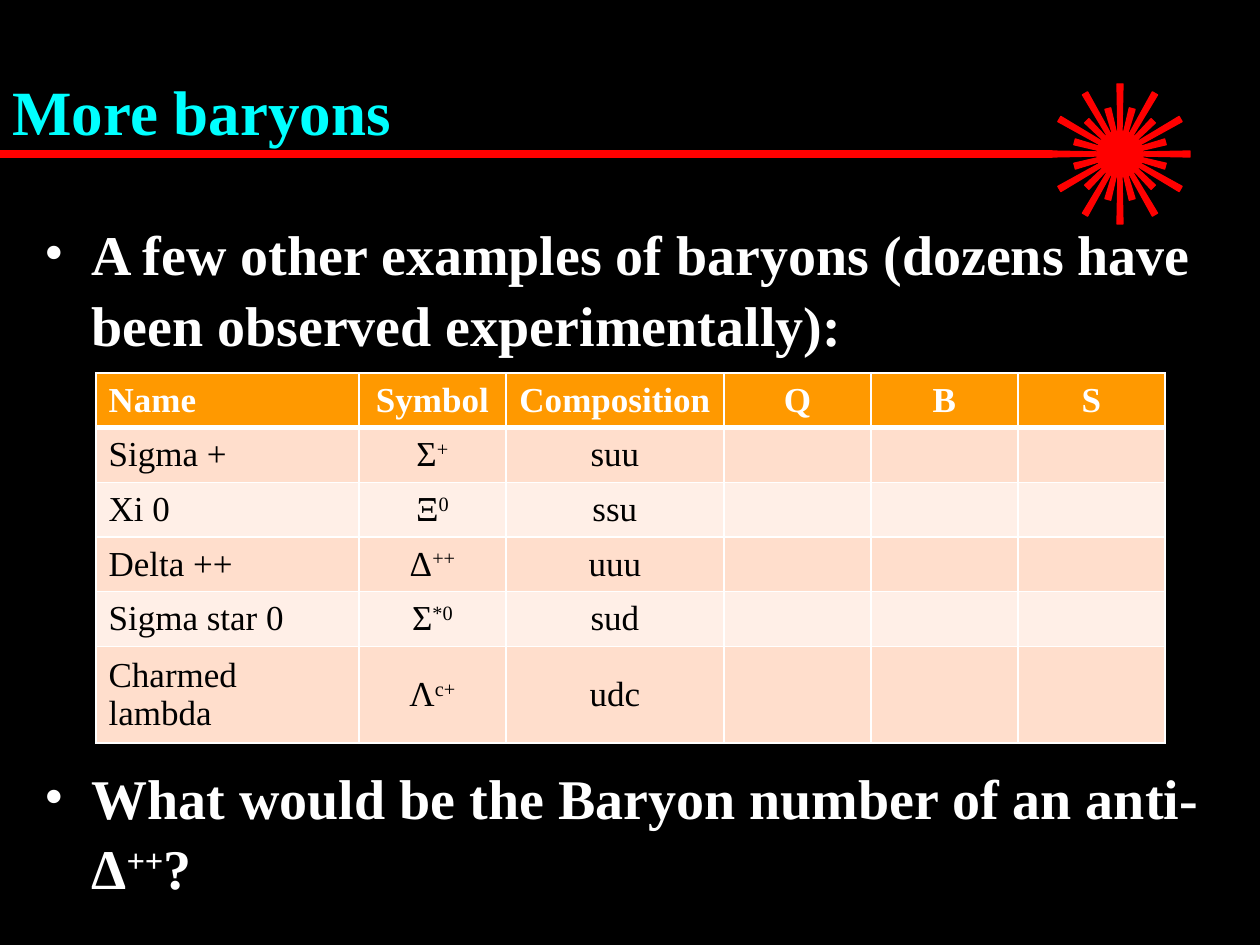
from dataclasses import dataclass
from math import cos, radians, sin

from lxml import etree
from pptx import Presentation
from pptx import util as u
from pptx.dml.color import RGBColor
from pptx.enum import shapes, text
from pptx.oxml.ns import qn


@dataclass(frozen=True)
class Theme:
    """Colours, font and type sizes of the slide."""
    font: str = "Times New Roman"
    back: str = "000000"
    ink: str = "FFFFFF"
    title: str = "00FFFF"
    accent: str = "FF0000"
    header: str = "FF9900"
    bands: tuple = ("FFDECC", "FFEFE7")
    cell_ink: str = "000000"
    title_size: int = 36
    body_size: int = 32
    table_size: int = 20


THEME = Theme()
HEADERS = ["Name", "Symbol", "Composition", "Q", "B", "S"]
BARYONS = [
    ("Sigma +", "Σ^+", "suu"),
    ("Xi 0", "Ξ^0", "ssu"),
    ("Delta ++", "Δ^++", "uuu"),
    ("Sigma star 0", "Σ^*0", "sud"),
    ("Charmed lambda", "Λ^c+", "udc"),
]
COLUMN_WIDTHS = [263, 147, 218, 147, 147, 147]
ROW_HEIGHT = 52


def px(length):
    """Turn pixels into EMU."""
    return u.Emu(round(length * 914400 / 126))


def rgb(colour):
    """Turn a hex string into a colour."""
    return RGBColor.from_string(colour)


def write(paragraph, content, *, size, colour, bold=False, align=None):
    """Write text in which ^ switches superscript on and off."""
    paragraph.alignment = align
    for index, part in enumerate(content.split("^")):
        if not part:
            continue
        run = paragraph.add_run()
        run.text = part
        run.font.name = THEME.font
        run.font.size = u.Pt(size)
        run.font.bold = bold
        run.font.color.rgb = rgb(colour)
        if index % 2:
            run.font._element.set("baseline", "30000")


def add_text_frame(slide, left, top, width, height, anchor):
    """Add a wrapping text box and return its frame."""
    frame = slide.shapes.add_textbox(px(left), px(top), px(width), px(height)).text_frame
    frame.word_wrap = True
    frame.vertical_anchor = anchor
    return frame


def add_bullet(paragraph, indent):
    """Give a paragraph a round bullet with a hanging indent."""
    properties = paragraph._p.get_or_add_pPr()
    properties.set("marL", str(px(indent)))
    properties.set("indent", str(-px(indent)))
    etree.SubElement(properties, qn("a:buFont"), typeface=THEME.font)
    etree.SubElement(properties, qn("a:buChar"), char="•")


def paint(shape):
    """Fill and outline a shape in the accent colour."""
    shape.shadow.inherit = False
    shape.fill.solid()
    shape.fill.fore_color.rgb = rgb(THEME.accent)
    shape.line.color.rgb = rgb(THEME.accent)
    shape.line.width = u.Pt(0.75)


def add_preset(slide, kind, left, top, width, height):
    """Add a painted preset shape."""
    paint(slide.shapes.add_shape(kind, px(left), px(top), px(width), px(height)))


def add_ray(slide, centre, angle, inner, outer, inner_half, outer_half):
    """Add one tapered ray, its angle clockwise from the top."""
    turn = radians(angle)

    def place(across, out):
        """Turn a point of the upright ray about the centre."""
        return (px(centre[0] + across * cos(turn) + out * sin(turn)),
                px(centre[1] + across * sin(turn) - out * cos(turn)))

    corners = [place(-outer_half, outer), place(outer_half, outer),
               place(inner_half, inner), place(-inner_half, inner)]
    builder = slide.shapes.build_freeform(*corners[0])
    builder.add_line_segments(corners[1:], close=True)
    paint(builder.convert_to_shape())


def add_burst(slide, x, y):
    """Add the disc with twelve long and twelve short rays."""
    radius = 23
    add_preset(slide, shapes.MSO_SHAPE.OVAL, x - radius, y - radius, 2 * radius, 2 * radius)
    for angle in range(0, 360, 30):
        add_ray(slide, (x, y), angle, 19, 70, 2, 3)
        add_ray(slide, (x, y), angle + 15, 18, 47, 2, 3)


def set_borders(cell, bottom):
    """Draw the four borders of a cell, the bottom one in its own width."""
    properties = cell._tc.get_or_add_tcPr()
    for index, (side, width) in enumerate([("L", 1), ("R", 1), ("T", 1), ("B", bottom)]):
        border = etree.Element(qn(f"a:ln{side}"), w=str(u.Pt(width)))
        fill = etree.SubElement(border, qn("a:solidFill"))
        etree.SubElement(fill, qn("a:srgbClr"), val=THEME.ink)
        properties.insert(index, border)


def add_baryon_table(slide, left, top):
    """Add the table of baryons."""
    rows = [HEADERS, *BARYONS]
    table = slide.shapes.add_table(
        len(rows), len(HEADERS), px(left), px(top),
        px(sum(COLUMN_WIDTHS)), px(ROW_HEIGHT * len(rows))).table
    for column, width in zip(table.columns, COLUMN_WIDTHS):
        column.width = px(width)
    for r, row in enumerate(rows):
        is_header = r == 0
        for c in range(len(HEADERS)):
            cell = table.cell(r, c)
            cell.vertical_anchor = text.MSO_ANCHOR.MIDDLE
            cell.fill.solid()
            cell.fill.fore_color.rgb = rgb(THEME.header if is_header else THEME.bands[(r - 1) % 2])
            set_borders(cell, 3 if is_header else 1)
            if c < len(row):
                write(cell.text_frame.paragraphs[0], row[c], size=THEME.table_size,
                      colour=THEME.ink if is_header else THEME.cell_ink, bold=is_header,
                      align=text.PP_ALIGN.CENTER if c else text.PP_ALIGN.LEFT)


def add_body(slide):
    """Add the two bulleted statements, with room for the table between."""
    frame = add_text_frame(slide, 32, 210, 1228, 703, text.MSO_ANCHOR.TOP)
    statements = [
        ("A few other examples of baryons (dozens have been observed experimentally):", 6.4),
        ("What would be the Baryon number of an anti-Δ^++^?", 230),
    ]
    for index, (statement, space) in enumerate(statements):
        paragraph = frame.add_paragraph() if index else frame.paragraphs[0]
        paragraph.space_before = u.Pt(space)
        paragraph.line_spacing = 1.05
        add_bullet(paragraph, 47)
        write(paragraph, statement, size=THEME.body_size, colour=THEME.ink, bold=True)


def main():
    """Build the slide and save it."""
    deck = Presentation()
    deck.slide_width, deck.slide_height = px(1260), px(945)
    slide = deck.slides.add_slide(deck.slide_layouts[6])
    slide.background.fill.solid()
    slide.background.fill.fore_color.rgb = rgb(THEME.back)
    add_burst(slide, 1120, 154)
    add_preset(slide, shapes.MSO_SHAPE.RECTANGLE, 0, 151, 1052, 6)
    title = add_text_frame(slide, 0, 32, 1071, 157, text.MSO_ANCHOR.MIDDLE)
    write(title.paragraphs[0], "More baryons", size=THEME.title_size,
          colour=THEME.title, bold=True)
    add_body(slide)
    add_baryon_table(slide, 96, 373)
    deck.save("out.pptx")


if __name__ == "__main__":
    main()
